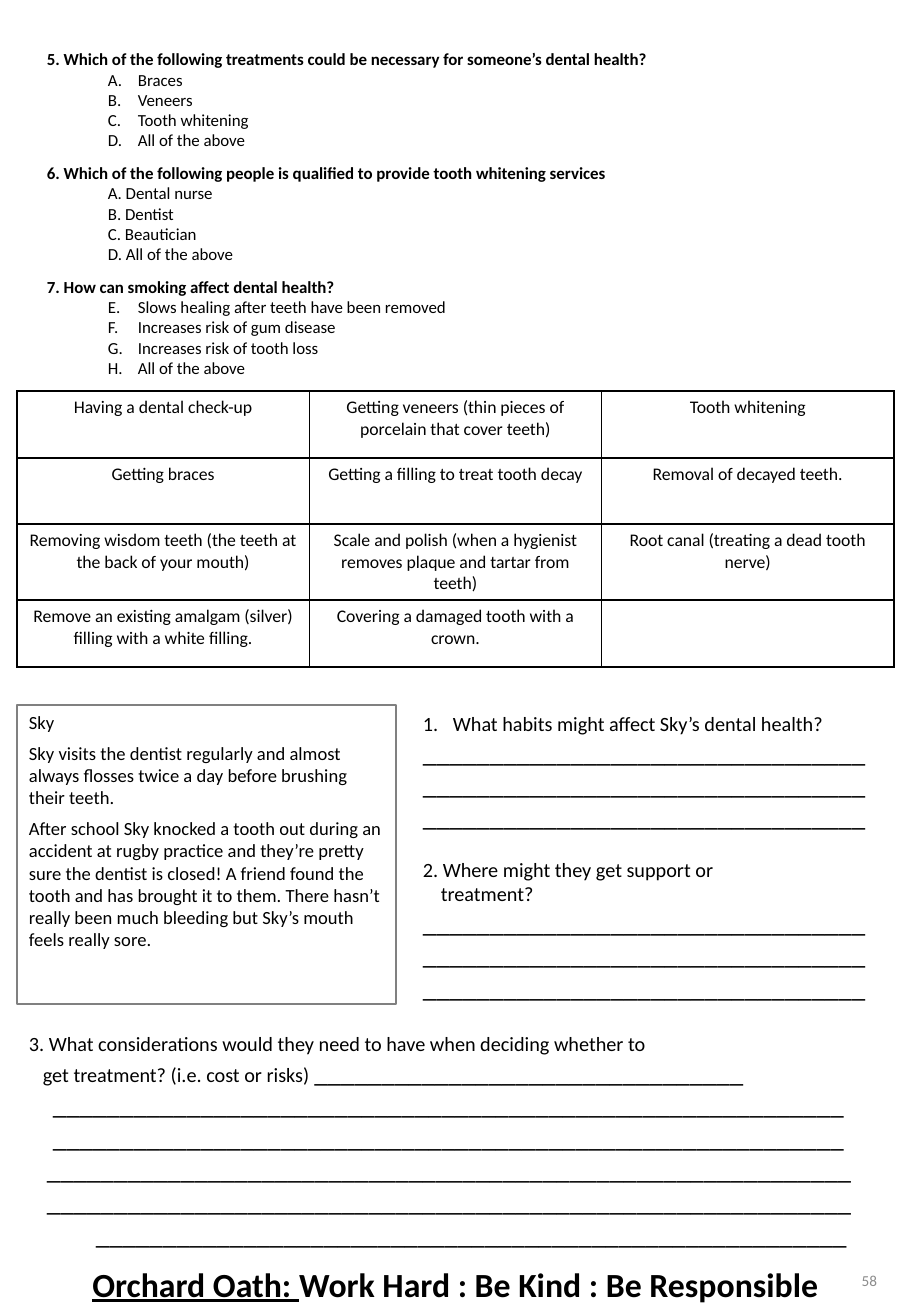
from dataclasses import dataclass

from lxml.etree import SubElement
from pptx import Presentation
from pptx.dml.color import RGBColor
from pptx.enum.shapes import MSO_SHAPE as Preset
from pptx.enum.text import MSO_ANCHOR as Anchor, PP_ALIGN as Align
from pptx.oxml import parse_xml
from pptx.oxml.ns import nsdecls, qn
from pptx.util import Emu, Pt

EMU_PER_PX = 7526
BLACK = RGBColor(0x00, 0x00, 0x00)
FRAME_GREY = RGBColor(0x80, 0x80, 0x80)
NUMBER_GREY = RGBColor(0x8C, 0x8C, 0x8C)
FONT = "Calibri"
RULE_SIZE = 16


@dataclass
class Line:
    """One paragraph: text and size in points, gap before it, left margin and hang in px."""
    text: str
    size: float
    bold: bool = False
    gap: float = 0
    margin: int = 0
    hang: int = 0
    numbering: str = ""
    start: int = 1
    rule: int = 0  # underscores that follow the text as a writing line


def writing_line(count, margin=0):
    return Line("", RULE_SIZE, margin=margin, rule=count)


# question, answers, first automatic letter (0 where the letters are typed)
QUIZ = [
    ("5. Which of the following treatments could be necessary for someone’s dental health?",
     ["Braces", "Veneers", "Tooth whitening", "All of the above"], 1),
    ("6. Which of the following people is qualified to provide tooth whitening services",
     ["A. Dental nurse", "B. Dentist", "C. Beautician", "D. All of the above"], 0),
    ("7. How can smoking affect dental health?",
     ["Slows healing after teeth have been removed", "Increases risk of gum disease",
      "Increases risk of tooth loss", "All of the above"], 5),
]
TREATMENTS = [
    ["Having a dental check-up",
     "Getting veneers (thin pieces of porcelain that cover teeth)",
     "Tooth whitening"],
    ["Getting braces", "Getting a filling to treat tooth decay", "Removal of decayed teeth."],
    ["Removing wisdom teeth (the teeth at the back of your mouth)",
     "Scale and polish (when a hygienist removes plaque and tartar from teeth)",
     "Root canal (treating a dead tooth nerve)"],
    ["Remove an existing amalgam (silver) filling with a white filling.",
     "Covering a damaged tooth with a crown.", ""],
]
ROW_HEIGHTS = [67, 66, 76, 67]
STORY = [
    Line("Sky", 11),
    Line("Sky visits the dentist regularly and almost always flosses twice a day before "
         "brushing their teeth.", 11, gap=5),
    Line("After school Sky knocked a tooth out during an accident at rugby practice and "
         "they’re pretty sure the dentist is closed! A friend found the tooth and has brought "
         "it to them. There hasn’t really been much bleeding but Sky’s mouth feels really "
         "sore.", 11, gap=5),
]
SKY_QUESTIONS = [
    Line("What habits might affect Sky’s dental health?", 12,
         margin=30, hang=30, numbering="arabicPeriod"),
    *[writing_line(33) for _ in range(3)],
    Line("2. Where might they get support or", 12, gap=14.5),
    Line("treatment?", 12, margin=18),
    *[writing_line(33) for _ in range(3)],
]
CONSIDERATIONS = [
    Line("3. What considerations would they need to have when deciding whether to", 12),
    Line("get treatment? (i.e. cost or risks) ", 12, margin=14, rule=32),
    *[writing_line(count, margin)
      for count, margin in [(59, 24), (59, 24), (60, 18), (60, 18), (56, 67)]],
]
MOTTO = ["Orchard Oath: ", "Work Hard : Be Kind : Be Responsible"]
PAGE_NUMBER = "58"

# left, top, width, height
PAGE = (911, 1316)
QUIZ_BOX = (35, 43, 853, 348)
TABLE_BOX = (17, 391, 877, sum(ROW_HEIGHTS))
STORY_BOX = (17, 705, 379, 299)
SKY_BOX = (411, 705, 477, 356)
CONSIDERATIONS_BOX = (17, 1025, 855, 266)
MOTTO_BOX = (0, 1262, 911, 54)
NUMBER_BOX = (684, 1245, 205, 70)


def px(length):
    return Emu(length * EMU_PER_PX)


def add_run(paragraph, text, size, bold=False, color=BLACK):
    run = paragraph.add_run()
    run.text = text
    run.font.name = FONT
    run.font.size = Pt(size)
    run.font.bold = bold
    run.font.color.rgb = color
    return run


def write_lines(text_frame, lines):
    text_frame.word_wrap = True
    for index, line in enumerate(lines):
        paragraph = text_frame.add_paragraph() if index else text_frame.paragraphs[0]
        paragraph.alignment = Align.LEFT
        properties = paragraph._p.get_or_add_pPr()
        properties.set("marL", str(px(line.margin)))
        properties.set("indent", str(px(-line.hang)))
        if line.numbering:
            SubElement(properties, qn("a:buAutoNum"),
                       type=line.numbering, startAt=str(line.start))
        if line.gap:
            paragraph.space_before = Pt(line.gap)
        if line.text:
            add_run(paragraph, line.text, line.size, line.bold)
        if line.rule:
            add_run(paragraph, "_" * line.rule, RULE_SIZE)


def add_text_box(slide, box):
    text_frame = slide.shapes.add_textbox(*map(px, box)).text_frame
    text_frame.word_wrap = True
    return text_frame


def quiz_lines():
    lines = []
    for question, answers, start in QUIZ:
        lines.append(Line(question, 10, bold=True, gap=7.3 if lines else 0))
        for answer in answers:
            if start:
                lines.append(Line(answer, 10, margin=91, hang=30,
                                  numbering="alphaUcPeriod", start=start))
            else:
                lines.append(Line(answer, 10, margin=61))
    return lines


def set_borders(cell):
    properties = cell._tc.get_or_add_tcPr()
    for position, side in enumerate(("lnL", "lnR", "lnT", "lnB")):
        properties.insert(position, parse_xml(
            f'<a:{side} {nsdecls("a")} w="{Pt(1)}"><a:solidFill>'
            f'<a:srgbClr val="{BLACK}"/></a:solidFill></a:{side}>'))


def add_treatment_table(slide):
    table = slide.shapes.add_table(
        len(TREATMENTS), len(TREATMENTS[0]), *map(px, TABLE_BOX)).table
    table.first_row = table.horz_banding = False
    for row, height, texts in zip(table.rows, ROW_HEIGHTS, TREATMENTS):
        row.height = px(height)
        for cell, text in zip(row.cells, texts):
            cell.fill.background()
            set_borders(cell)
            paragraph = cell.text_frame.paragraphs[0]
            paragraph.alignment = Align.CENTER
            if text:
                add_run(paragraph, text, 10.5)


def add_story(slide):
    story = slide.shapes.add_shape(Preset.RECTANGLE, *map(px, STORY_BOX))
    story.shadow.inherit = False
    story.fill.background()
    story.line.color.rgb = FRAME_GREY
    story.line.width = Pt(0.75)
    story.text_frame.vertical_anchor = Anchor.TOP
    write_lines(story.text_frame, STORY)


def add_footer(slide):
    motto = add_text_box(slide, MOTTO_BOX).paragraphs[0]
    motto.alignment = Align.CENTER
    motto.line_spacing = 0.9
    for text, underlined in zip(MOTTO, (True, False)):
        add_run(motto, text, 20, bold=True).font.underline = underlined
    number_frame = add_text_box(slide, NUMBER_BOX)
    number_frame.vertical_anchor = Anchor.MIDDLE
    number = number_frame.paragraphs[0]
    number.alignment = Align.RIGHT
    add_run(number, PAGE_NUMBER, 9, color=NUMBER_GREY)


def main():
    presentation = Presentation()
    presentation.slide_width, presentation.slide_height = map(px, PAGE)
    slide = presentation.slides.add_slide(presentation.slide_layouts[6])
    add_footer(slide)
    write_lines(add_text_box(slide, QUIZ_BOX), quiz_lines())
    add_treatment_table(slide)
    add_story(slide)
    write_lines(add_text_box(slide, SKY_BOX), SKY_QUESTIONS)
    write_lines(add_text_box(slide, CONSIDERATIONS_BOX), CONSIDERATIONS)
    presentation.save("out.pptx")


if __name__ == "__main__":
    main()
